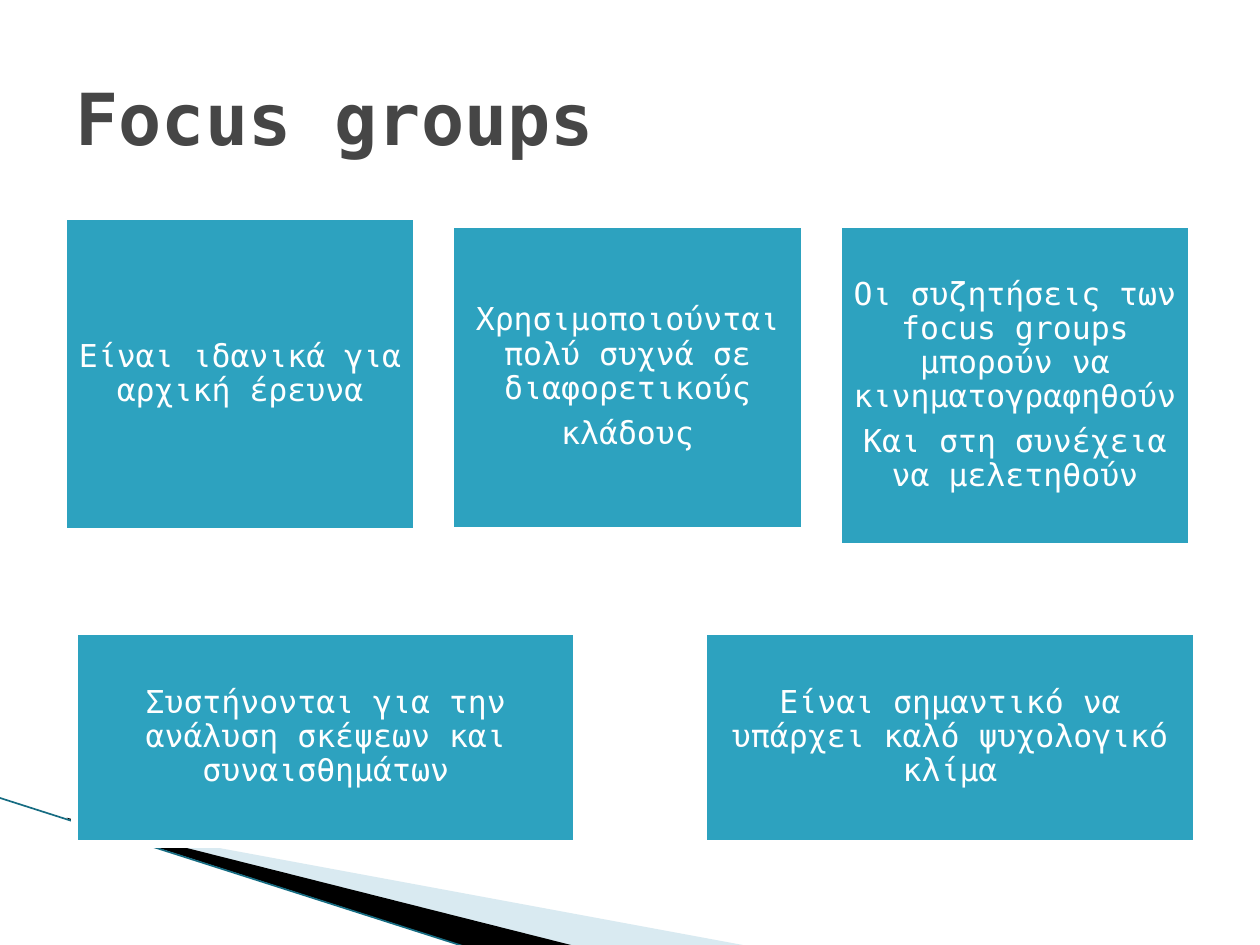
from lxml import etree
from pptx import Presentation
from pptx.dml.color import RGBColor
from pptx.enum import shapes, text
from pptx.oxml.ns import qn
from pptx.util import Inches, Pt

FONT = "DejaVu Sans Mono"
WHITE = RGBColor(0xFF, 0xFF, 0xFF)
BLACK = RGBColor(0x00, 0x00, 0x00)
TEAL = RGBColor(0x2D, 0xA2, 0xBF)
DARK_TEAL = RGBColor(0x16, 0x6C, 0x82)
PALE_BLUE = RGBColor(0xA0, 0xCB, 0xDC)
GREY = RGBColor(0x46, 0x46, 0x46)

TOP_WIDTH = 2.81
TOP_LEFT, TOP_STEP = 0.5, 3.075
# top, height, paragraphs
TOP_CARDS = [
    (1.72, 2.5, ["Είναι ιδανικά για αρχική έρευνα"]),
    (1.78, 2.43, ["Χρησιμοποιούνται πολύ συχνά σε διαφορετικούς", "κλάδους"]),
    (1.78, 2.56, ["Οι συζητήσεις των focus groups μπορούν να κινηματογραφηθούν",
                  "Και στη συνέχεια να μελετηθούν"]),
]
BOTTOM_TOP, BOTTOM_HEIGHT = 5.01, 1.69
# left, width, paragraphs
BOTTOM_CARDS = [
    (0.59, 3.99, ["Συστήνονται για την ανάλυση σκέψεων και συναισθημάτων"]),
    (5.58, 3.92, ["Είναι σημαντικό να υπάρχει καλό ψυχολογικό κλίμα"]),
]


def style_font(font, size, color, bold=False):
    font.name = FONT
    font.size = Pt(size)
    font.bold = bold
    font.color.rgb = color


def add_wedge(page, points, color, opacity=100):
    start, *rest = [(Inches(x), Inches(y)) for x, y in points]
    builder = page.shapes.build_freeform(*start)
    builder.add_line_segments(rest, close=True)
    wedge = builder.convert_to_shape()
    wedge.shadow.inherit = False
    wedge.fill.solid()
    wedge.fill.fore_color.rgb = color
    wedge.line.fill.background()
    if opacity < 100:
        fill_color = wedge.fill._xPr.find(qn("a:solidFill"))[0]
        etree.SubElement(fill_color, qn("a:alpha")).set("val", str(opacity * 1000))


def add_line(page, start, end, color, width):
    line = page.shapes.add_connector(
        shapes.MSO_CONNECTOR.STRAIGHT, *[Inches(value) for value in start + end])
    line.line.color.rgb = color
    line.line.width = Pt(width)
    etree.SubElement(line._element.spPr, qn("a:effectLst"))


def add_card(page, left, top, width, height, paragraphs):
    card = page.shapes.add_shape(
        shapes.MSO_SHAPE.RECTANGLE,
        Inches(left), Inches(top), Inches(width), Inches(height))
    card.shadow.inherit = False
    card.fill.solid()
    card.fill.fore_color.rgb = TEAL
    card.line.color.rgb = WHITE
    card.line.width = Pt(4.33)
    frame = card.text_frame
    frame.word_wrap = True
    frame.vertical_anchor = text.MSO_ANCHOR.MIDDLE
    frame.margin_left = frame.margin_right = Inches(0.07)
    frame.margin_top = frame.margin_bottom = Inches(0.07)
    frame.text = "\n".join(paragraphs)
    for para in frame.paragraphs:
        para.alignment = text.PP_ALIGN.CENTER
        para.line_spacing = 0.9
        para.space_after = Pt(6.3)
        style_font(para.runs[0].font, 18, WHITE)


def set_title(page, wording):
    title = page.shapes.title
    title.left, title.top = Inches(0.5), Inches(0.3)
    title.width, title.height = Inches(9), Inches(1.25)
    frame = title.text_frame
    frame.text = wording
    frame.vertical_anchor = text.MSO_ANCHOR.MIDDLE
    para = frame.paragraphs[0]
    para.alignment = text.PP_ALIGN.LEFT
    style_font(para.runs[0].font, 41, GREY, bold=True)


def main():
    deck = Presentation()
    deck.slide_width, deck.slide_height = Inches(10), Inches(7.5)
    page = deck.slides.add_slide(deck.slide_layouts[5])
    set_title(page, "Focus groups")

    add_wedge(page, [(0.55, 6.51), (5.95, 7.51), (4.56, 7.51), (0.55, 6.5)],
              PALE_BLUE, opacity=40)
    add_wedge(page, [(0.53, 6.49), (4.57, 7.51), (3.72, 7.52), (0.54, 6.5)], BLACK)
    add_line(page, (-0.01, 6.33), (3.71, 7.52), DARK_TEAL, 0.95)

    for column, (top, height, paragraphs) in enumerate(TOP_CARDS):
        add_card(page, TOP_LEFT + column * TOP_STEP, top, TOP_WIDTH, height, paragraphs)
    for left, width, paragraphs in BOTTOM_CARDS:
        add_card(page, left, BOTTOM_TOP, width, BOTTOM_HEIGHT, paragraphs)

    deck.save("out.pptx")


if __name__ == "__main__":
    main()
